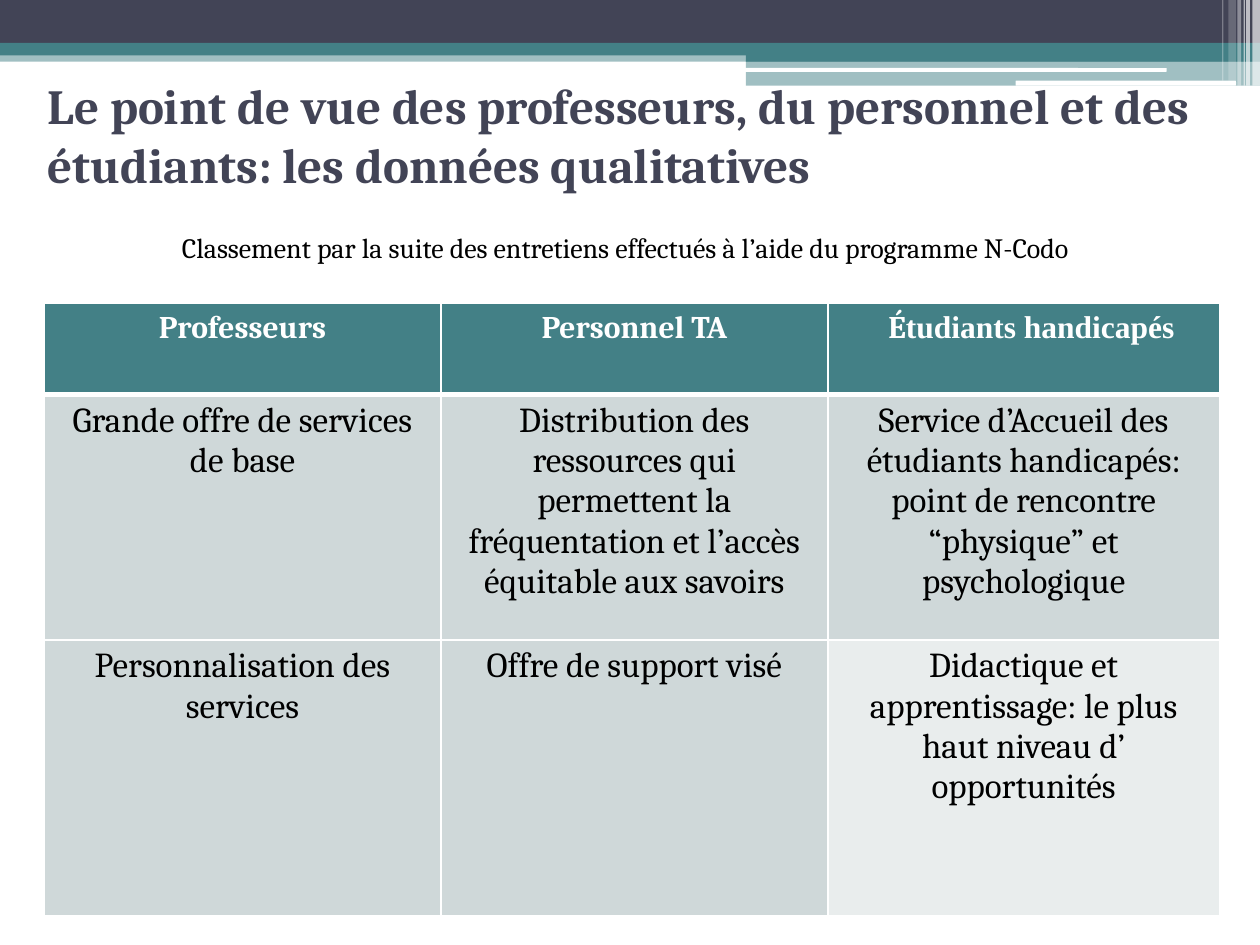
from dataclasses import dataclass
from typing import Any

from pptx import Presentation
from pptx.dml.color import RGBColor
from pptx.enum.shapes import MSO_SHAPE
from pptx.enum.text import MSO_ANCHOR, PP_ALIGN
from pptx.oxml import parse_xml
from pptx.oxml.ns import nsdecls
from pptx.util import Pt

EMU_PER_PX = 9144  # 100 px to the inch


@dataclass(frozen=True)
class Theme:
    dark: str = "424456"
    teal: str = "438086"
    pale: str = "CFD8D9"
    paler: str = "E9EDED"
    white: str = "FFFFFF"
    black: str = "000000"
    serif: str = "Cambria"
    roman: str = "Times New Roman"
    title_size: int = 28
    body_size: int = 20
    head_size: int = 18
    note_size: int = 16


THEME = Theme()


@dataclass(frozen=True)
class Band:
    left: int
    top: int
    width: int
    height: int
    color: str
    opacity: int = 100
    rounded: bool = False


@dataclass(frozen=True)
class Span:
    text: str
    size: int
    color: str
    bold: bool = False
    font: str = THEME.serif


@dataclass(frozen=True)
class Label:
    left: int
    top: int
    width: int
    height: int
    span: Span
    align: Any
    anchor: Any


def px(length: int) -> int:
    return length * EMU_PER_PX


def apply_format(target: Any, values: dict) -> None:
    for name, value in values.items():
        setattr(target, name, value)


def solid_fill(fill: Any, color: str) -> None:
    fill.solid()
    fill.fore_color.rgb = RGBColor.from_string(color)


def write_spans(para: Any, spans: list[Span], align: Any) -> None:
    para.alignment = align
    for span in spans:
        run = para.add_run()
        run.text = span.text
        apply_format(run.font, {"name": span.font, "size": Pt(span.size), "bold": span.bold})
        run.font.color.rgb = RGBColor.from_string(span.color)


def draw_band(page: Any, band: Band) -> None:
    kind = MSO_SHAPE.ROUNDED_RECTANGLE if band.rounded else MSO_SHAPE.RECTANGLE
    box = page.shapes.add_shape(kind, px(band.left), px(band.top), px(band.width), px(band.height))
    box.shadow.inherit = False
    box.line.fill.background()
    solid_fill(box.fill, band.color)
    if band.opacity < 100:
        color = box.fill._xPr.find(".//{*}srgbClr")
        color.append(parse_xml(f'<a:alpha {nsdecls("a")} val="{band.opacity * 1000}"/>'))


def draw_label(page: Any, label: Label) -> None:
    box = page.shapes.add_textbox(px(label.left), px(label.top), px(label.width), px(label.height))
    apply_format(box.text_frame, {"word_wrap": True, "vertical_anchor": label.anchor})
    write_spans(box.text_frame.paragraphs[0], [label.span], label.align)


def draw_borders(cell: Any, top: int, bottom: int) -> None:
    properties = cell._tc.get_or_add_tcPr()
    for side, width in {"L": 1, "R": 1, "T": top, "B": bottom}.items():
        properties.append(parse_xml(
            f'<a:ln{side} {nsdecls("a")} w="{Pt(width)}"><a:solidFill>'
            f'<a:srgbClr val="{THEME.white}"/></a:solidFill></a:ln{side}>'))


def head(text: str, font: str = THEME.serif) -> Span:
    return Span(text, THEME.head_size, THEME.white, True, font)


def body(text: str) -> list[Span]:
    return [Span(text, THEME.body_size, THEME.black)]


# Layered bands at the top, then the thin stripes at the right
BANDS = [
    Band(0, 40, 1000, 9, THEME.teal, 50),
    Band(0, 0, 1000, 34, THEME.dark),
    Band(0, 34, 1000, 10, THEME.teal),
    Band(592, 39, 408, 10, THEME.teal),
    Band(592, 48, 408, 20, THEME.teal, 50),
    Band(591, 54, 335, 3, THEME.white, rounded=True),
    Band(806, 64, 175, 4, THEME.white, rounded=True),
] + [
    Band(left, 0, width, height, THEME.white, opacity)
    for left, width, height, opacity in [
        (994, 6, 68, 65), (989, 3, 68, 65), (987, 1, 68, 60),
        (982, 3, 68, 40), (975, 6, 64, 20), (970, 1, 64, 30)]
]

LABELS = [
    Label(28, 60, 941, 93,
          Span("Le point de vue des professeurs, du personnel et des étudiants: "
               "les données qualitatives", THEME.title_size, THEME.dark, True),
          PP_ALIGN.LEFT, MSO_ANCHOR.MIDDLE),
    Label(75, 178, 843, 77,
          Span("Classement par la suite des entretiens effectués à l’aide du programme N-Codo",
               THEME.note_size, THEME.black),
          PP_ALIGN.CENTER, MSO_ANCHOR.TOP),
]

COLUMNS = [315, 307, 311]
ROWS = [72, 195, 219]
CELLS = [
    [[head("Professeurs")], [head("Personnel TA")],
     [head("É"), head("tudiants handicapés", THEME.roman)]],
    [body("Grande offre de services de base"),
     body("Distribution des ressources qui permettent la fréquentation "
          "et l’accès équitable aux savoirs"),
     body("Service d’Accueil des étudiants handicapés: point de rencontre "
          "“physique” et psychologique")],
    [body("Personnalisation des services"), body("Offre de support visé"),
     body("Didactique et apprentissage: le plus haut niveau d’ opportunités")],
]


def draw_table(page: Any) -> None:
    table = page.shapes.add_table(len(ROWS), len(COLUMNS), px(35), px(241),
                                  px(sum(COLUMNS)), px(sum(ROWS))).table
    for column, width in zip(table.columns, COLUMNS):
        column.width = px(width)
    for row, height in zip(table.rows, ROWS):
        row.height = px(height)
    for r, row_spans in enumerate(CELLS):
        for c, spans in enumerate(row_spans):
            cell = table.cell(r, c)
            draw_borders(cell, top=3 if r == 1 else 1, bottom=3 if r == 0 else 1)
            last = (r, c) == (len(ROWS) - 1, len(COLUMNS) - 1)
            solid_fill(cell.fill, THEME.teal if r == 0 else THEME.paler if last else THEME.pale)
            write_spans(cell.text_frame.paragraphs[0], spans, PP_ALIGN.CENTER)
    # The last heading is set from an indent on the left
    last_head = table.cell(0, len(COLUMNS) - 1)
    last_head.margin_left = px(48)
    last_head.text_frame.paragraphs[0].alignment = PP_ALIGN.LEFT


def main() -> None:
    deck = Presentation()
    apply_format(deck, {"slide_width": px(1000), "slide_height": px(750)})
    page = deck.slides.add_slide(deck.slide_layouts[6])
    for band in BANDS:
        draw_band(page, band)
    draw_table(page)
    for label in LABELS:
        draw_label(page, label)
    deck.save("out.pptx")


if __name__ == "__main__":
    main()
